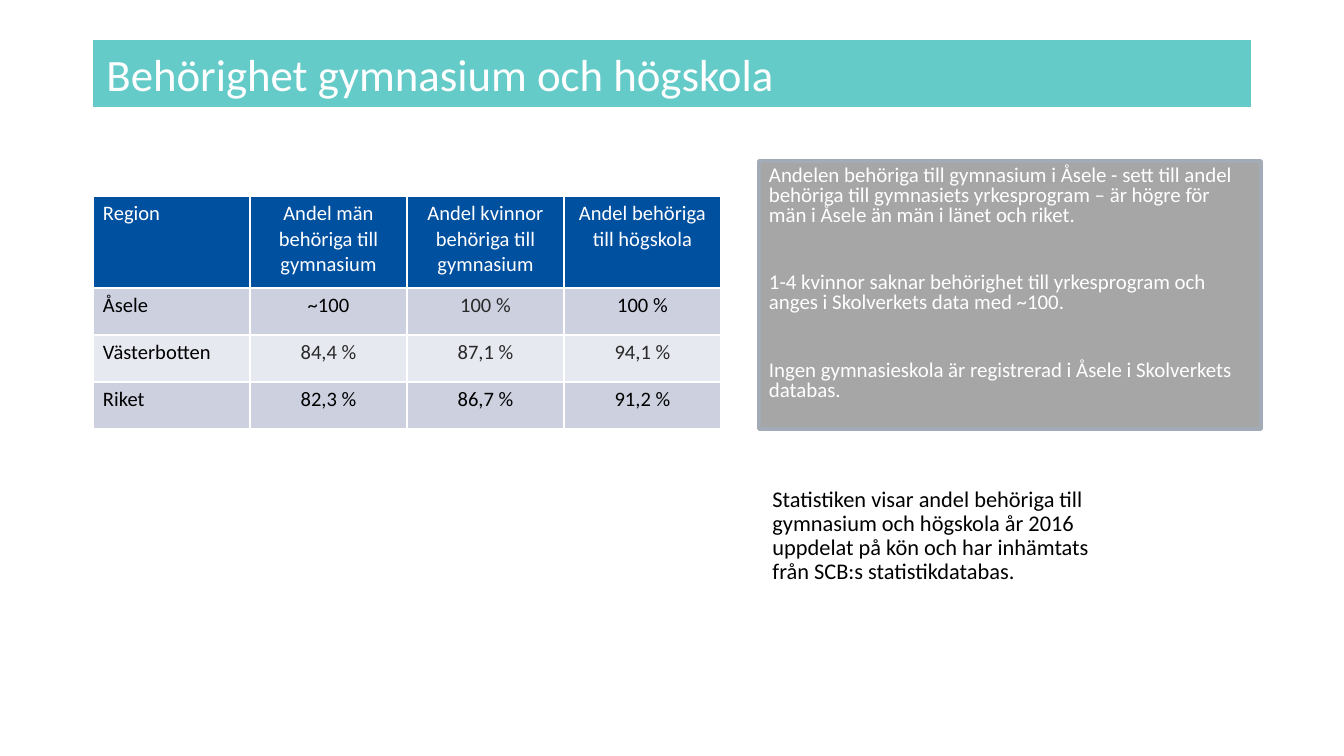
"""Build a slide on eligibility for upper secondary school and university."""
from lxml.etree import SubElement
from pptx import Presentation
from pptx.dml.color import RGBColor
from pptx.enum.text import MSO_ANCHOR as Anchor, MSO_AUTO_SIZE as AutoSize, PP_ALIGN as Align
from pptx.oxml.ns import qn
from pptx.util import Pt

EMU_PER_PX = 914400 / 134.4
TEAL = RGBColor(0x64, 0xCB, 0xC9)
BLUE = RGBColor(0x00, 0x50, 0xA0)
LAVENDER = RGBColor(0xCC, 0xD0, 0xDF)
PALE = RGBColor(0xE7, 0xE9, 0xF0)
GRAY = RGBColor(0xA6, 0xA6, 0xA6)
GRAY_LINE = RGBColor(0xA3, 0xAB, 0xB6)
CHARCOAL = RGBColor(0x29, 0x29, 0x29)
BLACK = RGBColor(0x00, 0x00, 0x00)
WHITE = RGBColor(0xFF, 0xFF, 0xFF)

ROWS = [
    ["Region", "Andel män behöriga till gymnasium",
     "Andel kvinnor behöriga till gymnasium", "Andel behöriga till högskola"],
    ["Åsele", "~100", "100 %", "100 %"],
    ["Västerbotten", "84,4 %", "87,1 %", "94,1 %"],
    ["Riket", "82,3 %", "86,7 %", "91,2 %"],
]
ROW_HEIGHTS = [92, 47, 47, 47]
ROW_FILLS = [BLUE, LAVENDER, PALE, LAVENDER]
COLUMN_WIDTH = 157
CHARCOAL_CELLS = {(1, 2), (2, 1), (2, 2), (2, 3)}

COMMENTS = [
    "Andelen behöriga till gymnasium i Åsele - sett till andel behöriga till "
    "gymnasiets yrkesprogram – är högre för män i Åsele än män i länet och riket.",
    "1-4 kvinnor saknar behörighet till yrkesprogram och anges i Skolverkets data med ~100.",
    "Ingen gymnasieskola är registrerad i Åsele i Skolverkets databas.",
]
SOURCE_NOTE = ("Statistiken visar andel behöriga till gymnasium och högskola år 2016 "
               "uppdelat på kön och har inhämtats från SCB:s statistikdatabas.")


def px(length):
    return round(length * EMU_PER_PX)


def fill_placeholder(shape, box, lines, size, color, line_spacing, gap=0):
    shape.left, shape.top, shape.width, shape.height = map(px, box)
    frame = shape.text_frame
    frame.text = "\n".join(lines)
    frame.auto_size = AutoSize.NONE
    frame.word_wrap = True
    for index, paragraph in enumerate(frame.paragraphs):
        paragraph.alignment = Align.LEFT
        paragraph.line_spacing = line_spacing
        paragraph.space_before = Pt(gap if index else 0)
        properties = paragraph._p.get_or_add_pPr()
        properties.set("marL", "0")
        properties.set("indent", "0")
        SubElement(properties, qn("a:buNone"))
        for run in paragraph.runs:
            run.font.name = "Calibri"
            run.font.size = Pt(size)
            run.font.color.rgb = color


presentation = Presentation()
presentation.slide_width = px(1344)
presentation.slide_height = px(756)
slide = presentation.slides.add_slide(presentation.slide_layouts[3])
title = slide.shapes.title
source_note, comment_box = slide.placeholders[1], slide.placeholders[2]

fill_placeholder(title, (93, 40, 1158, 67), ["Behörighet gymnasium och högskola"],
                 24, WHITE, 1.0)
title.fill.solid()
title.fill.fore_color.rgb = TEAL
title.text_frame.vertical_anchor = Anchor.MIDDLE

fill_placeholder(source_note, (759, 481, 356, 129), [SOURCE_NOTE], 12, BLACK, 0.9)

fill_placeholder(comment_box, (759, 161, 502, 268), COMMENTS, 11.2, WHITE, 0.8, 25.5)
comment_box.fill.solid()
comment_box.fill.fore_color.rgb = GRAY
comment_box.line.color.rgb = GRAY_LINE
comment_box.line.width = Pt(2)
frame = comment_box.text_frame
frame.margin_left = frame.margin_right = px(10)
frame.margin_top = frame.margin_bottom = px(5)

table = slide.shapes.add_table(len(ROWS), len(ROWS[0]), px(93), px(196),
                               px(COLUMN_WIDTH * len(ROWS[0])), px(sum(ROW_HEIGHTS))).table
for column in table.columns:
    column.width = px(COLUMN_WIDTH)
for row_index, texts in enumerate(ROWS):
    table.rows[row_index].height = px(ROW_HEIGHTS[row_index])
    for column_index, text in enumerate(texts):
        cell = table.cell(row_index, column_index)
        cell.fill.solid()
        cell.fill.fore_color.rgb = ROW_FILLS[row_index]
        cell.margin_left = cell.margin_right = px(10)
        cell.margin_top = cell.margin_bottom = px(5)
        cell.text_frame.text = text
        paragraph = cell.text_frame.paragraphs[0]
        paragraph.alignment = Align.CENTER if column_index else Align.LEFT
        font = paragraph.runs[0].font
        font.name = "Calibri"
        font.size = Pt(11)
        font.bold = False
        if row_index == 0:
            font.color.rgb = WHITE
        elif (row_index, column_index) in CHARCOAL_CELLS:
            font.color.rgb = CHARCOAL
        else:
            font.color.rgb = BLACK

presentation.save("out.pptx")
